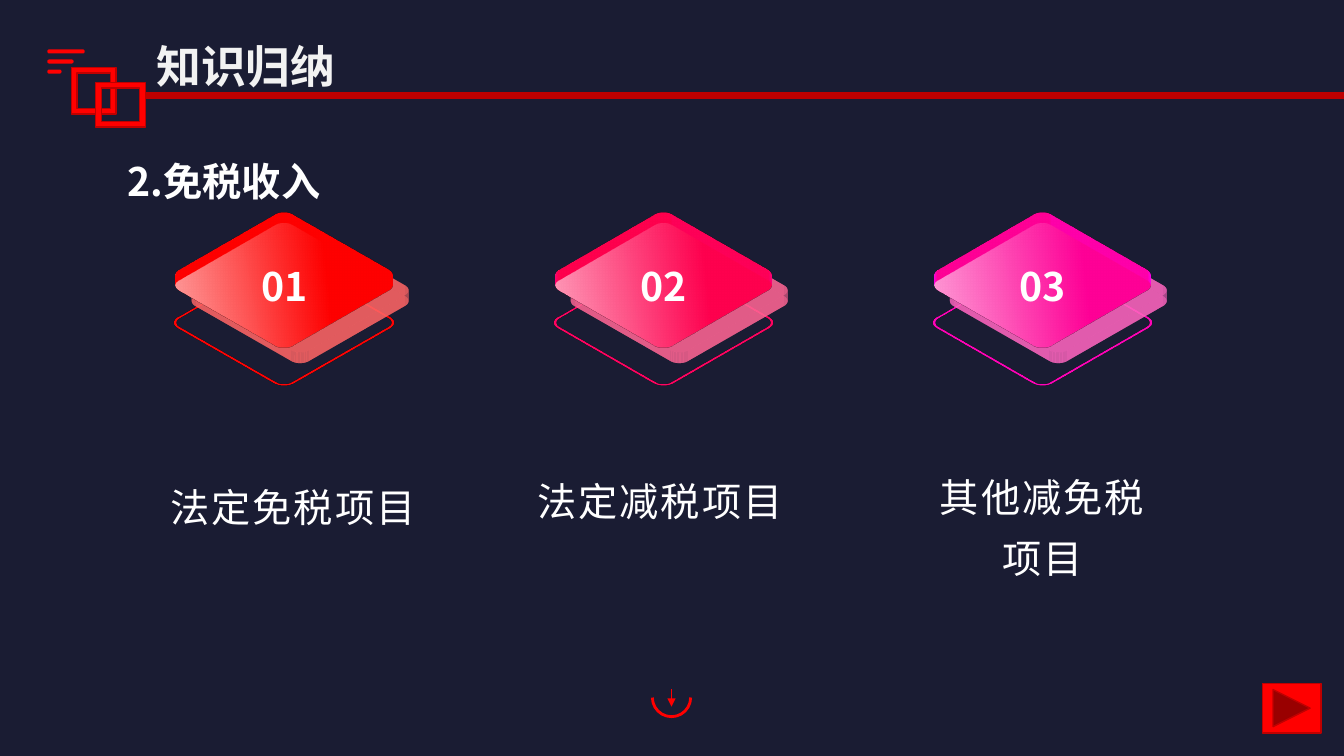
import pptx
import pptx.util
import pptx.dml.color
import pptx.enum.shapes
import pptx.enum.text
import pptx.oxml.ns
from lxml import etree

Inches, Pt = pptx.util.Inches, pptx.util.Pt
SHAPE = pptx.enum.shapes.MSO_SHAPE
ALIGN = pptx.enum.text.PP_ALIGN
ANCHOR = pptx.enum.text.MSO_ANCHOR
qn = pptx.oxml.ns.qn

NOTO = "Noto Sans CJK SC"
HUES = {"back": "1A1C33", "red": "FF0000", "edge": "BF0000", "rule": "BD0000",
        "title": "F2F2F2", "white": "FFFFFF"}
# number, light, main, shade
TILES = [
    ("01", "FF9999", "FF0000", "FF6666"),
    ("02", "FF99B8", "FF004E", "FF6695"),
    ("03", "FF99D5", "FF0096", "FF66C0"),
]
# label, left, top, width, top inset
NOTES = [
    ("法定免税项目", 1.56, 4.23, 2.69, 0.43),
    ("法定减税项目", 5.2, 4.18, 2.69, 0.42),
    ("其他减免税项目", 9.08, 4.56, 2.53, 0),
]


def rgb(hue):
    return pptx.dml.color.RGBColor.from_string(hue)


def node(parent, tag, **attrs):
    """Append a drawing element with its attributes."""
    child = etree.SubElement(parent, qn("a:" + tag))
    for key, value in attrs.items():
        child.set(key, str(value))
    return child


def add(slide, kind, x, y, w, h, fill=None, line=None, width=1):
    """Place a preset shape with a plain fill and line, or none."""
    box = [Inches(v) for v in (x, y, w, h)]
    shape = slide.shapes.add_shape(kind, *box)
    shape.shadow.inherit = False
    if fill:
        shape.fill.solid()
        shape.fill.fore_color.rgb = rgb(fill)
    else:
        shape.fill.background()
    shape.line.color.rgb = rgb(line)
    shape.line.width = Pt(width)
    return shape


def rule(slide, x1, y1, x2, y2, hue, width):
    ends = [Inches(v) for v in (x1, y1, x2, y2)]
    line = slide.shapes.add_connector(
        pptx.enum.shapes.MSO_CONNECTOR.STRAIGHT, *ends)
    line.line.color.rgb = rgb(hue)
    line.line.width = Pt(width)
    node(line._element.spPr, "effectLst")
    return line


def write(shape, text, size, face, hue, bold=False, align=ALIGN.LEFT):
    frame = shape.text_frame
    frame.word_wrap = True
    frame.auto_size = pptx.enum.text.MSO_AUTO_SIZE.NONE
    para = frame.paragraphs[0]
    para.text = text
    para.alignment = align
    font = para.font
    font.size, font.bold, font.name = Pt(size), bold, face
    font.color.rgb = rgb(hue)
    node(font._rPr, "ea", typeface=NOTO)
    return para


def label(slide, x, y, w, h, text, **look):
    box = slide.shapes.add_textbox(*[Inches(v) for v in (x, y, w, h)])
    return box, write(box, text, 28, NOTO, HUES["white"], **look)


def header(slide, x, y):
    # Speed bars
    for i, w in enumerate((0.35, 0.24, 0.12)):
        bar = add(slide, SHAPE.ROUNDED_RECTANGLE, x, y + 0.1 * i, w, 0.02,
                  fill=HUES["red"], line=HUES["red"], width=1.5)
        bar.adjustments[0] = 0.5
    # Linked frames and rule
    for dx, dy, w, h in ((0.23, 0.17, 0.44, 0.46), (0.47, 0.32, 0.49, 0.44)):
        add(slide, SHAPE.FRAME, x + dx, y + dy, w, h,
            fill=HUES["red"], line=HUES["edge"])
    rule(slide, x + 0.97, y + 0.45, 13.33, y + 0.45, HUES["rule"], 5)
    # Title
    title = slide.shapes.title
    title.left, title.top = Inches(x + 0.97), Inches(y - 0.17)
    title.width, title.height = Inches(4.44), Inches(0.64)
    title.text_frame.vertical_anchor = ANCHOR.TOP
    write(title, "知识归纳", 32, "Arial", HUES["title"], bold=True)


def plate(slide, cx, cy, line, depth=0):
    """Lay a rounded square flat in an isometric view."""
    side = 1.59
    shape = add(slide, SHAPE.ROUNDED_RECTANGLE, cx - side / 2, cy - side / 2,
                side, side, line=line, width=2)
    shape.adjustments[0] = 0.076
    shape.rotation = 180
    props = shape._element.spPr
    scene = node(props, "scene3d")
    node(scene, "camera", prst="isometricTopUp")
    node(scene, "lightRig", rig="flat", dir="t")
    if depth:
        solid = node(props, "sp3d", extrusionH=Inches(depth),
                     prstMaterial="flat")
        tint = node(solid, "extrusionClr")
        return shape, tint
    return shape, None


def tile(slide, cx, cy, num, light, main, shade):
    # Outline below
    plate(slide, cx, cy + 0.37, main)
    # Solid plate with gradient and shade
    shape, tint = plate(slide, cx, cy, HUES["white"], 0.13)
    node(tint, "srgbClr", val=main)
    shape.fill.gradient()
    shape.fill.gradient_angle = 320
    stops = zip(shape.fill.gradient_stops, ((0, light), (0.7, main)))
    for stop, (pos, hue) in stops:
        stop.position = pos
        stop.color.rgb = rgb(hue)
    effects = shape._element.spPr.find(qn("a:effectLst"))
    cast = node(effects, "outerShdw", blurRad=Pt(15), dist=Pt(16),
                dir=45 * 60000, algn="tl", rotWithShape=0)
    node(node(cast, "srgbClr", val=shade), "alpha", val=40000)
    # Number
    box, _ = label(slide, cx - 0.45, cy - 0.33, 0.9, 0.67, num,
                   bold=True, align=ALIGN.CENTER)
    frame = box.text_frame
    frame.vertical_anchor = ANCHOR.MIDDLE
    frame.margin_left = frame.margin_right = 0
    frame.margin_top = frame.margin_bottom = 0


def caption(slide, text, x, y, w, inset):
    box, para = label(slide, x, y, w, 1.71, text, align=ALIGN.CENTER)
    frame = box.text_frame
    frame.margin_left = frame.margin_right = Inches(0.08)
    frame.margin_top, frame.margin_bottom = Inches(inset), 0
    para.line_spacing = Pt(43.6)
    para.font._rPr.set("spc", "150")


def footer(slide, cx, cy):
    # Arc with arrow
    arc = add(slide, SHAPE.ARC, cx - 0.19, cy - 0.19, 0.38, 0.38,
              line=HUES["red"], width=2)
    arc.rotation = 90
    arc.adjustments[0], arc.adjustments[1] = 162, 53.78
    arrow = rule(slide, cx, cy - 0.08, cx, cy + 0.09, HUES["red"], 0.5)
    node(arrow.line._get_or_add_ln(), "tailEnd", type="triangle")
    # Next button
    add(slide, SHAPE.ACTION_BUTTON_FORWARD_OR_NEXT, 12.52, 6.78, 0.58, 0.49,
        fill=HUES["red"], line=HUES["edge"])


def main():
    deck = pptx.Presentation()
    deck.slide_width, deck.slide_height = Inches(13.33), Inches(7.5)
    slide = deck.slides.add_slide(deck.slide_layouts[5])
    slide.background.fill.solid()
    slide.background.fill.fore_color.rgb = rgb(HUES["back"])
    footer(slide, 6.66, 6.92)
    header(slide, 0.48, 0.5)
    label(slide, 1.17, 1.51, 4.44, 0.57, "2.免税收入", bold=True)
    for i, (item, note) in enumerate(zip(TILES, NOTES)):
        tile(slide, 2.82 + 3.76 * i, 2.83, *item)
        caption(slide, *note)
    deck.save("out.pptx")


if __name__ == "__main__":
    main()
